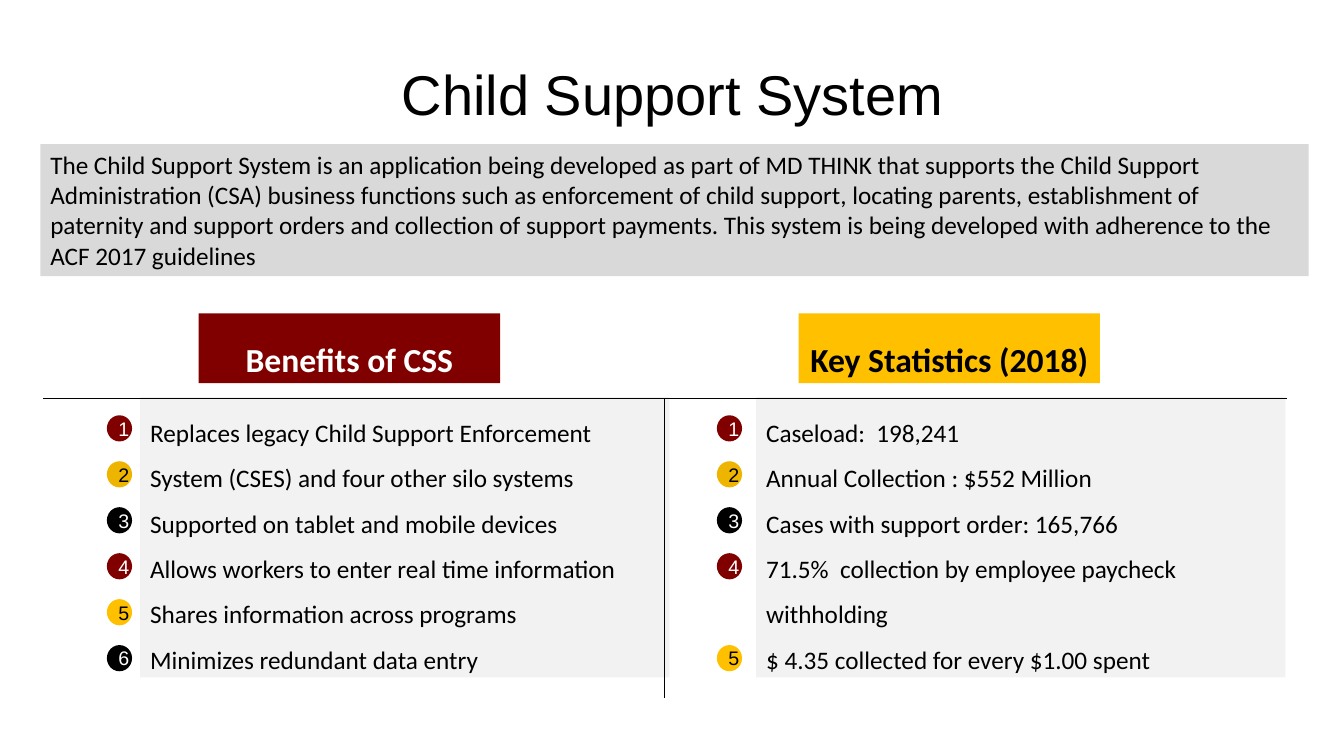
from dataclasses import dataclass

from pptx import Presentation
from pptx.dml.color import RGBColor
from pptx.enum.shapes import MSO_CONNECTOR, MSO_SHAPE
from pptx.enum.text import MSO_ANCHOR, PP_ALIGN
from pptx.oxml.ns import qn
from pptx.util import Inches, Pt

RECT, OVAL = MSO_SHAPE.RECTANGLE, MSO_SHAPE.OVAL
LINE = MSO_CONNECTOR.STRAIGHT
LEFT, CENTER = PP_ALIGN.LEFT, PP_ALIGN.CENTER
TOP, MIDDLE = MSO_ANCHOR.TOP, MSO_ANCHOR.MIDDLE

COLORS = {
    "black": "000000",
    "white": "FFFFFF",
    "maroon": "800000",
    "gold": "FFC000",
    "dark gold": "EEB500",
    "gray": "D9D9D9",
    "pale": "F2F2F2",
}
BADGE_COLORS = ["maroon", "dark gold", "black", "maroon", "gold", "black"]
BADGE_TOP, BADGE_BOTTOM = 4.12, 6.4
ROW = (BADGE_BOTTOM - BADGE_TOP) / 5
RULE_Y = 3.95

INTRO = (
    "The Child Support System is an application being developed as part of MD THINK "
    "that supports the Child Support Administration (CSA) business functions such as "
    "enforcement of child support, locating parents, establishment of paternity and "
    "support orders and collection of support payments. This system is being developed "
    "with adherence to the ACF 2017 guidelines"
)


@dataclass
class Style:
    size: float
    color: str = "black"
    font: str = "Calibri"
    bold: bool = False
    align: PP_ALIGN = LEFT
    anchor: MSO_ANCHOR = TOP
    spacing: float = 1.0


@dataclass
class Column:
    heading: str
    heading_left: float
    heading_fill: str
    heading_color: str
    list_left: float
    badge_left: float
    badge_rows: list[int]
    items: list[str]


COLUMNS = [
    Column("Benefits of CSS", 1.97, "maroon", "white", 1.39, 1.06, [0, 1, 2, 3, 4, 5], [
        "Replaces legacy Child Support Enforcement System (CSES) and four other silo systems",
        "Supported on tablet and mobile devices",
        "Allows workers to enter real time information",
        "Shares information across programs",
        "Minimizes redundant data entry",
    ]),
    Column("Key Statistics (2018)", 7.92, "gold", "black", 7.5, 7.11, [0, 1, 2, 3, 5], [
        "Caseload:  198,241",
        "Annual Collection : $552 Million",
        "Cases with support order: 165,766",
        "71.5%  collection by employee paycheck withholding",
        "$ 4.35 collected for every $1.00 spent",
    ]),
]


def rgb(name: str) -> RGBColor:
    return RGBColor.from_string(COLORS[name])


def write(tf, lines: list[str], style: Style) -> None:
    tf.word_wrap = True
    tf.vertical_anchor = style.anchor
    for i, line in enumerate(lines):
        p = tf.add_paragraph() if i else tf.paragraphs[0]
        p.text = line
        p.alignment = style.align
        p.line_spacing = style.spacing
        p.font.name = style.font
        p.font.size = Pt(style.size)
        p.font.bold = style.bold
        p.font.color.rgb = rgb(style.color)


def add_block(slide, kind, box: tuple, fill: str, lines: list[str], style: Style):
    """Add a borderless filled shape with text; box is left, top, width, height."""
    sp = slide.shapes.add_shape(kind, *map(Inches, box))
    sp.shadow.inherit = False
    sp.fill.solid()
    sp.fill.fore_color.rgb = rgb(fill)
    sp.line.fill.background()
    write(sp.text_frame, lines, style)
    return sp


def add_rule(slide, x1: float, y1: float, x2: float, y2: float) -> None:
    line = slide.shapes.add_connector(LINE, *map(Inches, (x1, y1, x2, y2)))
    line.line.color.rgb = rgb("black")
    line.line.width = Pt(0.75)
    sp_pr = line._element.spPr
    sp_pr.append(sp_pr.makeelement(qn("a:effectLst"), {}))


def add_column(slide, col: Column) -> None:
    heading = add_block(
        slide, RECT, (col.heading_left, 3.11, 2.99, 0.69), col.heading_fill, [col.heading],
        Style(24, col.heading_color, bold=True, align=CENTER, spacing=1.5))
    heading.text_frame.margin_bottom = Inches(0.1)
    add_block(slide, RECT, (col.list_left, 3.94, 5.25, 2.78), "pale", col.items,
              Style(18, spacing=1.5))
    for number, row in enumerate(col.badge_rows, 1):
        fill = BADGE_COLORS[number - 1]
        color = "black" if "gold" in fill else "white"
        add_block(slide, OVAL, (col.badge_left, BADGE_TOP + row * ROW, 0.25, 0.26), fill,
                  [str(number)], Style(14, color, "Arial", align=CENTER, anchor=MIDDLE))


def main() -> None:
    prs = Presentation()
    prs.slide_width, prs.slide_height = Inches(13.33), Inches(7.5)
    slide = prs.slides.add_slide(prs.slide_layouts[6])

    title = slide.shapes.add_textbox(*map(Inches, (0.67, 0.3, 12, 1.25)))
    write(title.text_frame, ["Child Support System"],
          Style(40, font="Arial", align=CENTER, anchor=MIDDLE))
    add_block(slide, RECT, (0.4, 1.43, 12.58, 1.31), "gray", [INTRO], Style(18))
    for col in COLUMNS:
        add_column(slide, col)
    add_rule(slide, 0.43, RULE_Y, 12.76, RULE_Y)
    add_rule(slide, 6.59, RULE_Y, 6.59, 6.92)
    prs.save("out.pptx")


if __name__ == "__main__":
    main()
